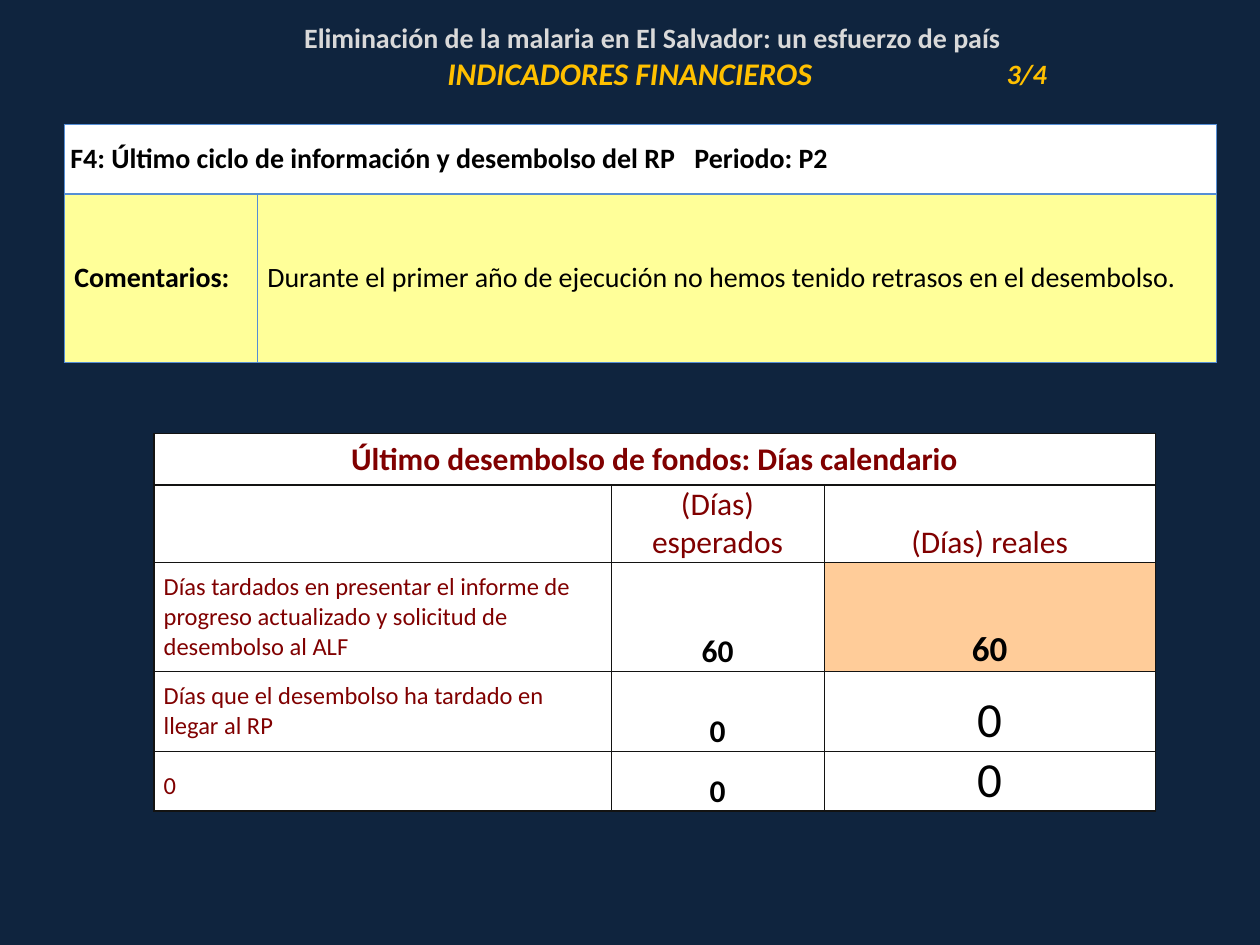
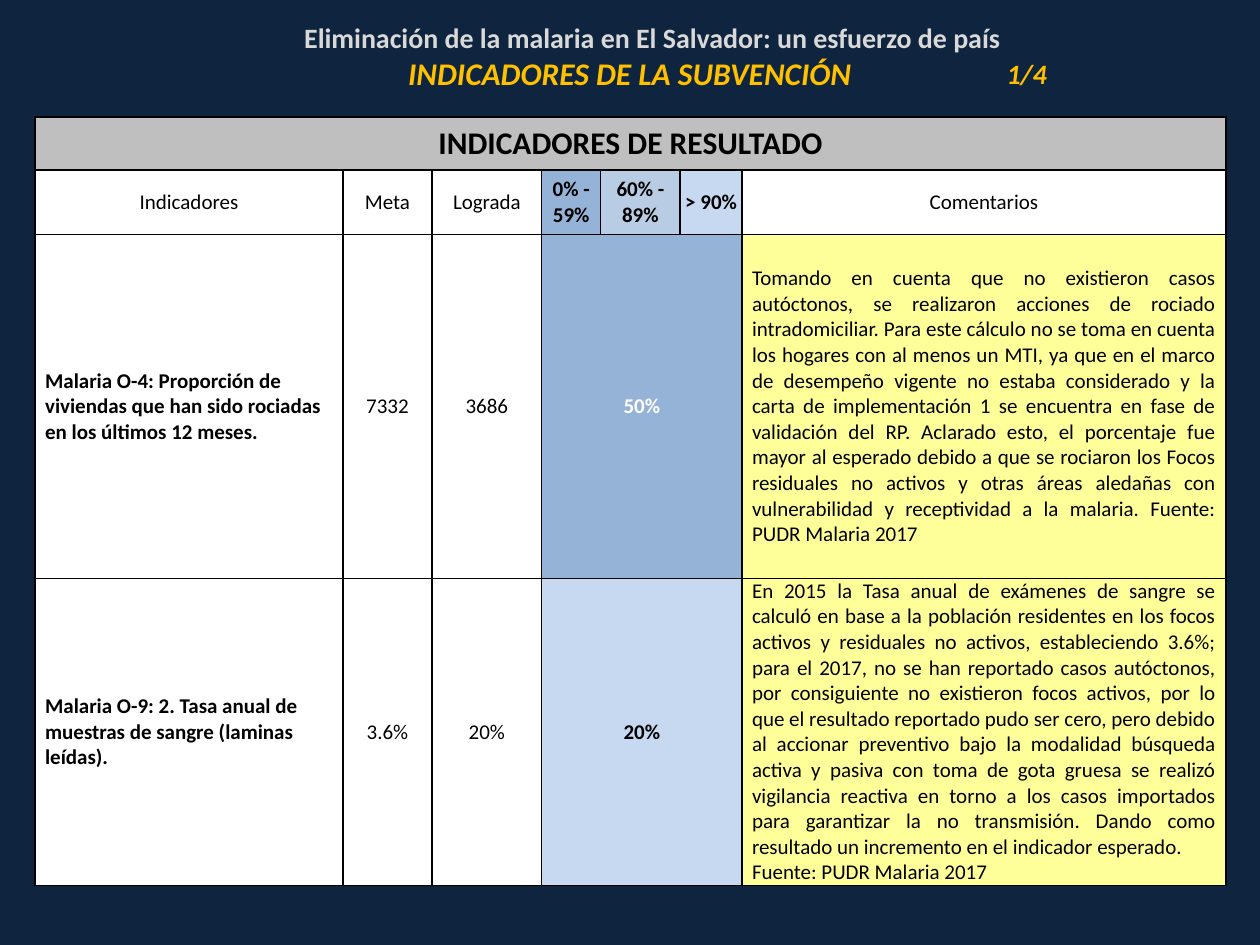
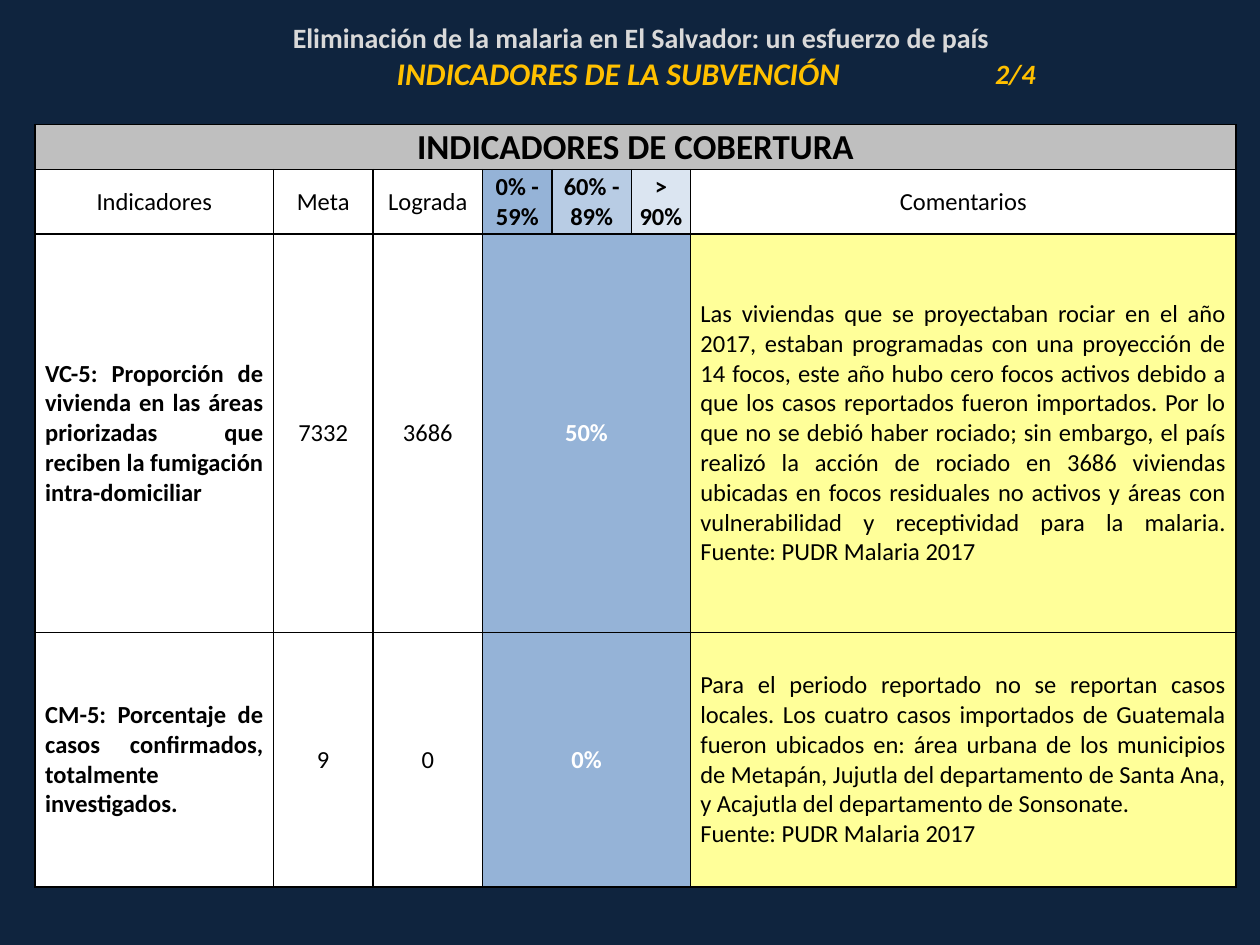
import pptx
import pptx.dml.color
import pptx.enum.text
import pptx.oxml.ns
import pptx.util
from lxml import etree

Cm = pptx.util.Cm
Pt = pptx.util.Pt
LEFT = pptx.enum.text.PP_ALIGN.LEFT
CENTER = pptx.enum.text.PP_ALIGN.CENTER
JUSTIFY = pptx.enum.text.PP_ALIGN.JUSTIFY
MIDDLE = pptx.enum.text.MSO_ANCHOR.MIDDLE
BOTTOM = pptx.enum.text.MSO_ANCHOR.BOTTOM

FONT = "Calibri"
COLORS = {
    "navy": "0F243E",
    "silver": "D9D9D9",
    "gold": "FFC000",
    "white": "FFFFFF",
    "black": "000000",
    "ink": "131312",
    "maroon": "800000",
    "frame": "558ED5",
    "comment": "FFFF99",
    "peach": "FFCC99",
    "gray": "BFBFBF",
    "low": "95B3D7",
    "medium": "B8CCE4",
    "high": "C6D9F1",
    "pale": "DBE5F1",
}
PAD = 0.2
SIDES = (PAD, 0, PAD, 0)
ALL_SIDES = (PAD,) * 4
SOURCE = "Fuente: PUDR Malaria 2017"


def rgb(name):
    return pptx.dml.color.RGBColor.from_string(COLORS[name])


def add_slide(prs):
    s = prs.slides.add_slide(prs.slide_layouts[6])
    s.background.fill.solid()
    s.background.fill.fore_color.rgb = rgb("navy")
    return s


def add_grid(s, left, top, cols, rows):
    """Add a table without banding, sized by its columns and rows in cm."""
    frame = s.shapes.add_table(len(rows), len(cols), Cm(left), Cm(top),
                               Cm(sum(cols)), Cm(sum(rows)))
    tbl = frame.table
    tbl.first_row = tbl.horz_banding = False
    for col, width in zip(tbl.columns, cols):
        col.width = Cm(width)
    for row, height in zip(tbl.rows, rows):
        row.height = Cm(height)
    return tbl


def set_borders(cell, color=None, widths=(1, 1, 1, 1)):
    """Set left, right, top and bottom lines; no colour means no line."""
    tc_pr = cell._tc.get_or_add_tcPr()
    qn = pptx.oxml.ns.qn
    for side, width in zip("LRTB", widths):
        ln = etree.SubElement(tc_pr, qn(f"a:ln{side}"), w=str(Pt(width)))
        if color:
            fill = etree.SubElement(ln, qn("a:solidFill"))
            etree.SubElement(fill, qn("a:srgbClr"), val=COLORS[color])
        else:
            etree.SubElement(ln, qn("a:noFill"))


def set_fill(cell, color):
    cell.fill.solid()
    cell.fill.fore_color.rgb = rgb(color)


def set_tab(p, position):
    p_pr = p._p.get_or_add_pPr()
    tabs = etree.SubElement(p_pr, pptx.oxml.ns.qn("a:tabLst"))
    etree.SubElement(tabs, pptx.oxml.ns.qn("a:tab"), pos=str(Cm(position)), algn="l")


def write(cell, *lines, size=16, color="black", bold=False, italic=False,
          align=LEFT, anchor=MIDDLE, margins=(0, 0, 0, 0)):
    """Write one paragraph per line; margins are left, top, right, bottom."""
    cell.vertical_anchor = anchor
    (cell.margin_left, cell.margin_top,
     cell.margin_right, cell.margin_bottom) = map(Cm, margins)
    tf = cell.text_frame
    for i, line in enumerate(lines):
        p = tf.add_paragraph() if i else tf.paragraphs[0]
        p.alignment = align
        r = p.add_run()
        r.text = line
        r.font.name = FONT
        r.font.size = Pt(size)
        r.font.bold = bold
        r.font.italic = italic
        r.font.color.rgb = rgb(color)


def add_title(s, section, page, left=1.8):
    tbl = add_grid(s, left, 0.33, (3.3, 15.19, 4.22), (0.79, 0.58))
    for cell in tbl.iter_cells():
        set_borders(cell)
        cell.fill.background()
    tbl.cell(0, 0).merge(tbl.cell(0, 2))
    write(tbl.cell(0, 0), "Eliminación de la malaria en El Salvador: un esfuerzo de país",
          color="silver", bold=True, align=CENTER, anchor=BOTTOM)
    write(tbl.cell(1, 0))
    write(tbl.cell(1, 1), section, size=18, color="gold", bold=True, italic=True,
          align=CENTER, anchor=BOTTOM)
    write(tbl.cell(1, 2), page, color="gold", bold=True, italic=True)


def add_comment_table(s, heading, comment):
    tbl = add_grid(s, 1.3, 2.51, (3.89, 19.33), (1.4, 3.4))
    for i, color in enumerate(("white", "comment")):
        for cell in tbl.rows[i].cells:
            set_borders(cell, "frame")
            set_fill(cell, color)
    tbl.cell(0, 0).merge(tbl.cell(0, 1))
    write(tbl.cell(0, 0), heading, bold=True, margins=(0.12, 0, 0, 0))
    set_tab(tbl.cell(0, 0).text_frame.paragraphs[0], 12.58)
    write(tbl.cell(1, 0), "Comentarios:", bold=True, margins=(PAD, 0, 0, 0))
    write(tbl.cell(1, 1), comment, margins=ALL_SIDES)


def add_days_table(s, heading, headers, rows):
    """Each row holds a label, the expected days and the actual days."""
    tbl = add_grid(s, 3.1, 8.74, (9.22, 4.29, 6.68), (1.04, 0.86, 1.04, 0.74, 0.74))
    last_row, last_col = len(tbl.rows) - 1, len(tbl.columns) - 1
    for i, row in enumerate(tbl.rows):
        for j, cell in enumerate(row.cells):
            strong = (j == 0, j == last_col, i <= 1, i in (0, last_row))
            set_borders(cell, "ink", [1 if edge else 0.5 for edge in strong])
            set_fill(cell, "white")
    tbl.cell(0, 0).merge(tbl.cell(0, 2))
    write(tbl.cell(0, 0), heading, size=18, color="maroon", bold=True, align=CENTER)
    write(tbl.cell(1, 0))
    for j, header in enumerate(headers, 1):
        write(tbl.cell(1, j), header, size=18, color="maroon", align=CENTER,
              anchor=BOTTOM, margins=SIDES)
    for i, (label, expected, actual) in enumerate(rows, 2):
        write(tbl.cell(i, 0), label, size=14, color="maroon", anchor=BOTTOM,
              margins=ALL_SIDES)
        write(tbl.cell(i, 1), expected, size=18, bold=True, align=CENTER, anchor=BOTTOM)
        first = i == 2
        write(tbl.cell(i, 2), actual, size=20 if first else 28, bold=first,
              align=CENTER, anchor=BOTTOM)
    set_fill(tbl.cell(2, 2), "peach")


def add_indicator_table(s, top, cols, heights, heading, heading_size, size,
                        top_band, label_align, rows):
    """Each row: label, target, achieved, percentage, its fill and colour, comments."""
    tbl = add_grid(s, 0.71, top, cols, heights)
    for cell in tbl.iter_cells():
        set_borders(cell, "black")
        set_fill(cell, "white")

    tbl.cell(0, 0).merge(tbl.cell(0, len(cols) - 1))
    set_fill(tbl.cell(0, 0), "gray")
    write(tbl.cell(0, 0), heading, size=heading_size, bold=True, align=CENTER)

    bands = {"0% - 59%": "low", "60% - 89%": "medium", "> 90%": top_band}
    headers = ("Indicadores", "Meta", "Lograda", *bands, "Comentarios")
    for cell, header in zip(tbl.rows[1].cells, headers):
        write(cell, header, size=size, bold=header in bands, align=CENTER)
        set_fill(cell, bands.get(header, "white"))

    for i, (label, target, achieved, percent, fill, color, comments) in enumerate(rows, 2):
        write(tbl.cell(i, 0), label, size=size, bold=True, align=label_align, margins=SIDES)
        for j, value in enumerate((target, achieved), 1):
            write(tbl.cell(i, j), value, size=size, align=CENTER, margins=SIDES)
        tbl.cell(i, 3).merge(tbl.cell(i, 5))
        set_fill(tbl.cell(i, 3), fill)
        write(tbl.cell(i, 3), percent, size=size, color=color, bold=True,
              align=CENTER, margins=SIDES)
        set_fill(tbl.cell(i, 6), "comment")
        write(tbl.cell(i, 6), *comments, size=size, align=JUSTIFY, margins=SIDES)


def build_financial(prs):
    s = add_slide(prs)
    add_title(s, "INDICADORES FINANCIEROS", "3/4")
    add_comment_table(
        s, "F4: Último ciclo de información y desembolso del RP\tPeriodo: P2",
        "Durante el primer año de ejecución no hemos tenido retrasos en el desembolso.")
    add_days_table(
        s, "Último desembolso de fondos: Días calendario",
        ("(Días) esperados", "(Días) reales"),
        [("Días tardados en presentar el informe de progreso actualizado y "
          "solicitud de desembolso al ALF", "60", "60"),
         ("Días que el desembolso ha tardado en llegar al RP", "0", "0"),
         ("0", "0", "0")])


def build_results(prs):
    s = add_slide(prs)
    rows = [
        ("Malaria O-4: Proporción de viviendas que han sido rociadas en los últimos 12 meses.",
         "7332", "3686", "50%", "low", "white",
         ["Tomando en cuenta que no existieron casos autóctonos, se realizaron acciones de "
          "rociado intradomiciliar. Para este cálculo no se toma en cuenta los hogares con al "
          "menos un MTI, ya que en el marco de desempeño vigente no estaba considerado y la "
          "carta de implementación 1 se encuentra en fase de validación del RP. Aclarado "
          "esto, el porcentaje fue mayor al esperado debido a que se rociaron los Focos "
          "residuales no activos y otras áreas aledañas con vulnerabilidad y receptividad a "
          f"la malaria. {SOURCE}"]),
        ("Malaria O-9: 2. Tasa anual de muestras de sangre (laminas leídas).",
         "3.6%", "20%", "20%", "high", "black",
         ["En 2015 la Tasa anual de exámenes de sangre se calculó en base a la población "
          "residentes en los focos activos y residuales no activos, estableciendo 3.6%; para "
          "el 2017, no se han reportado casos autóctonos, por consiguiente no existieron "
          "focos activos, por lo que el resultado reportado pudo ser cero, pero debido al "
          "accionar preventivo bajo la modalidad búsqueda activa y pasiva con toma de gota "
          "gruesa se realizó vigilancia reactiva en torno a los casos importados para "
          "garantizar la no transmisión. Dando como resultado un incremento en el indicador "
          "esperado.", SOURCE]),
    ]
    add_indicator_table(
        s, 2.36, (6.2, 1.8, 2.21, 1.19, 1.6, 1.25, 9.75), (1.07, 1.3, 6.93, 5.31),
        "INDICADORES DE RESULTADO", 18, 12, "high", LEFT, rows)
    add_title(s, "INDICADORES DE LA SUBVENCIÓN", "1/4")


def build_coverage(prs):
    s = add_slide(prs)
    rows = [
        ("VC-5: Proporción de vivienda en las áreas priorizadas que reciben la fumigación "
         "intra-domiciliar", "7332", "3686", "50%", "low", "white",
         ["Las viviendas que se proyectaban rociar en el año 2017, estaban programadas con una "
          "proyección de 14 focos, este año hubo cero focos activos debido a que los casos "
          "reportados fueron importados. Por lo que no se debió haber rociado; sin embargo, el "
          "país realizó la acción de rociado en 3686 viviendas ubicadas en focos residuales no "
          "activos y áreas con vulnerabilidad y receptividad para la malaria. "
          f"{SOURCE}"]),
        ("CM-5: Porcentaje de casos confirmados, totalmente investigados.",
         "9", "0", "0%", "low", "white",
         ["Para el periodo reportado no se reportan casos locales. Los cuatro casos importados "
          "de Guatemala fueron ubicados en: área urbana de los municipios de Metapán, Jujutla "
          "del departamento de Santa Ana, y Acajutla del departamento de Sonsonate.", SOURCE]),
    ]
    add_indicator_table(
        s, 2.51, (4.8, 2.01, 2.21, 1.4, 1.6, 1.19, 11), (0.91, 1.3, 8.03, 5.13),
        "INDICADORES DE COBERTURA", 20, 14, "pale", JUSTIFY, rows)
    add_title(s, "INDICADORES DE LA SUBVENCIÓN", "2/4", left=1.57)


def main():
    prs = pptx.Presentation()
    prs.slide_width, prs.slide_height = Cm(25.4), Cm(19.05)
    build_financial(prs)
    build_results(prs)
    build_coverage(prs)
    prs.save("out.pptx")


if __name__ == "__main__":
    main()
